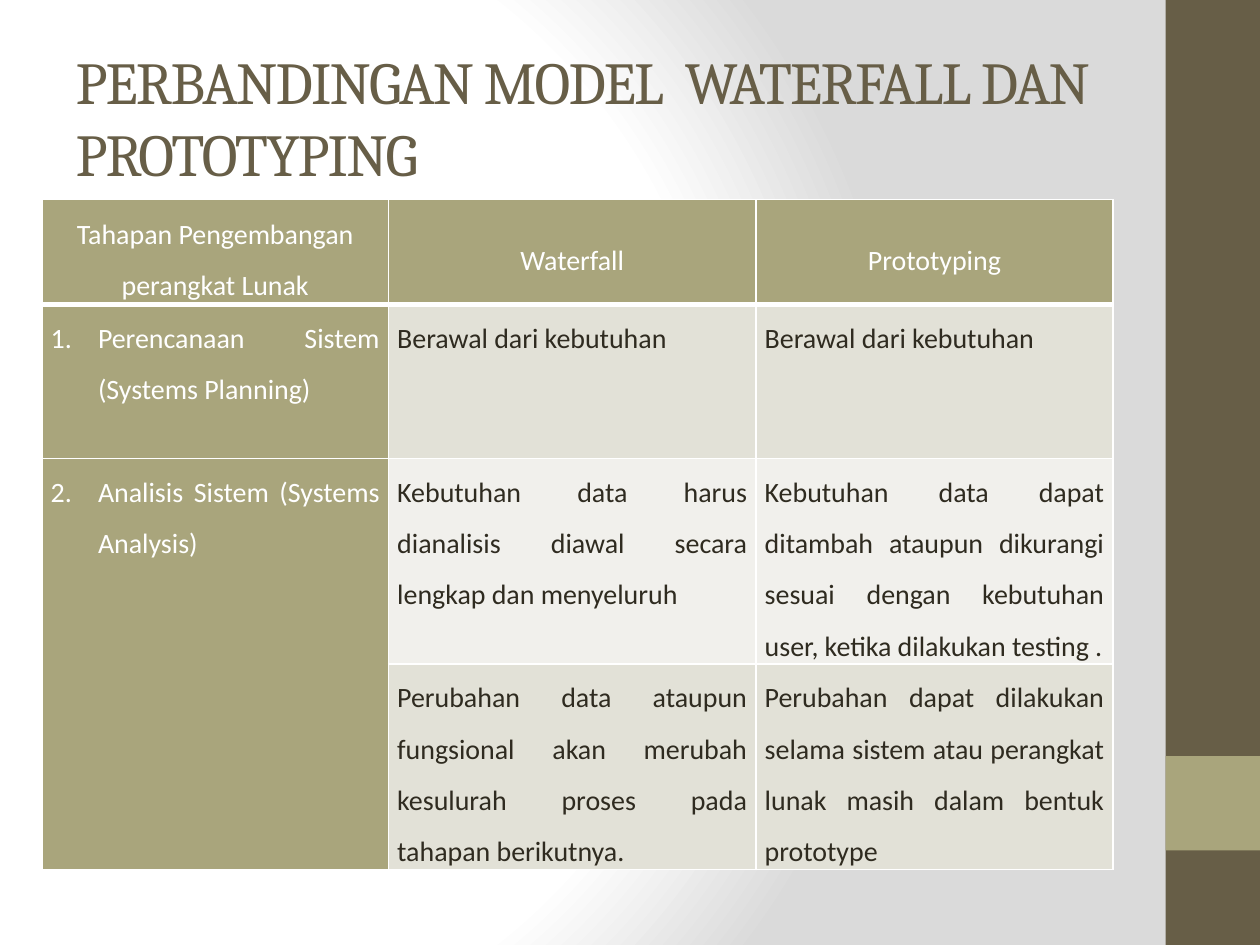
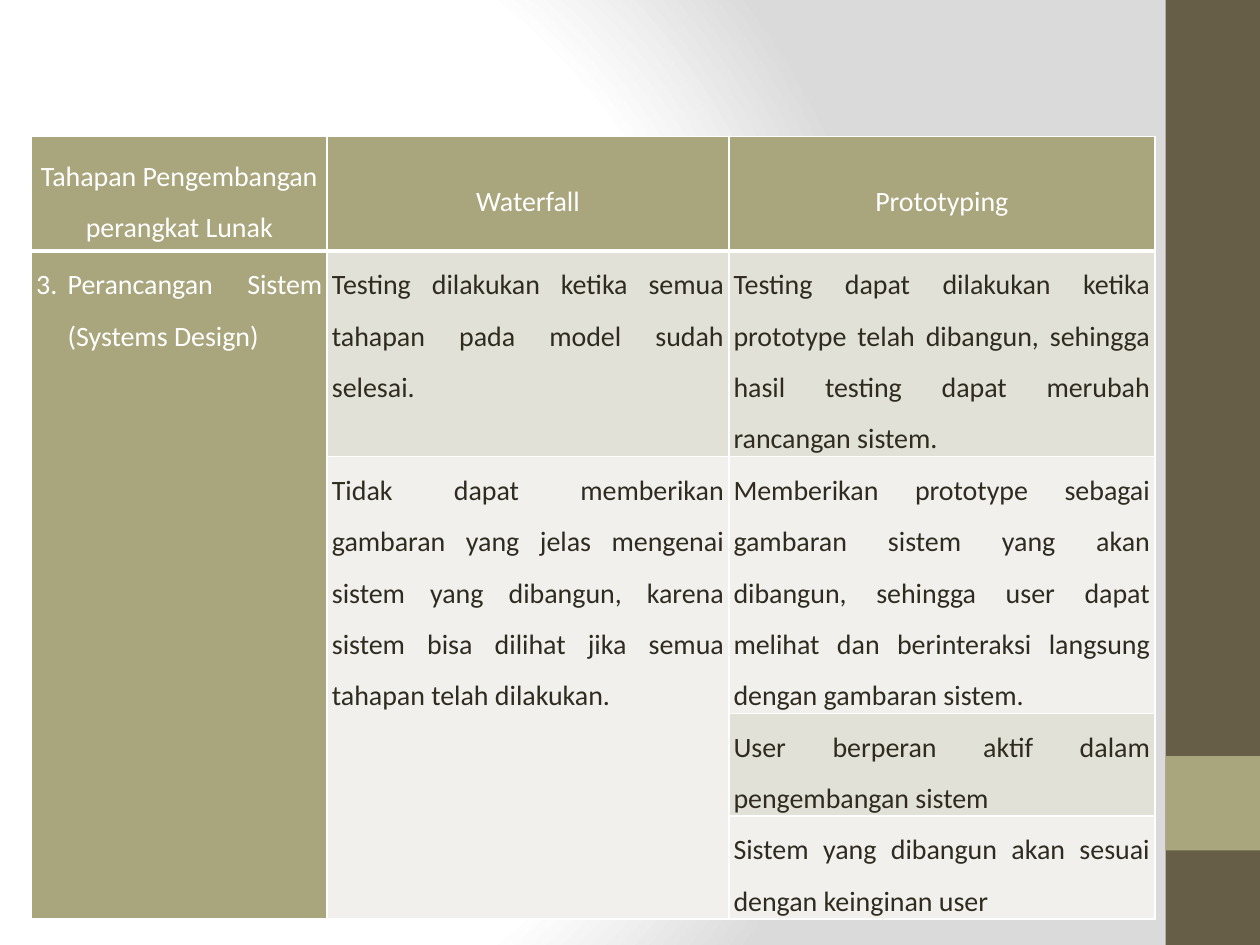
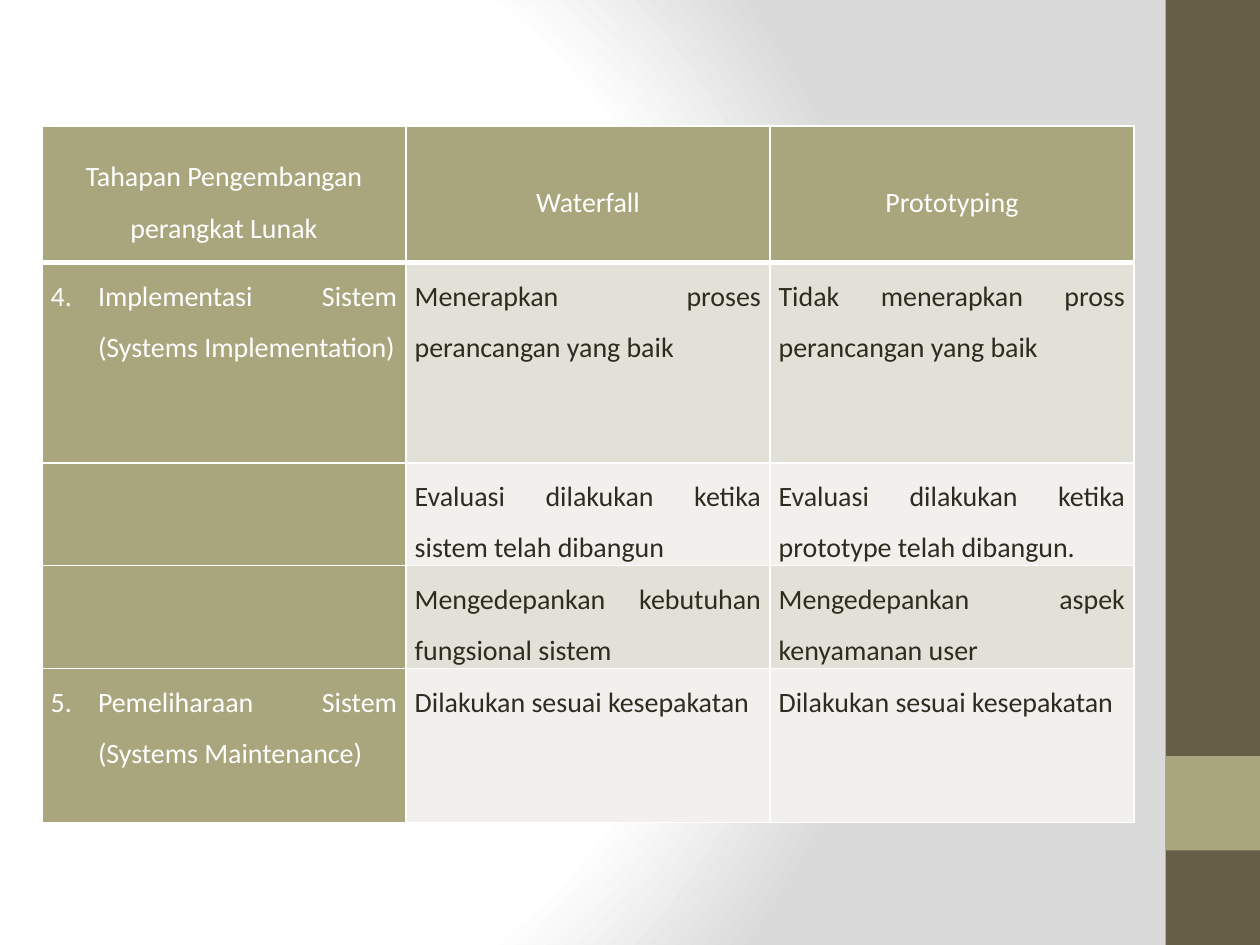
from pptx import Presentation
from pptx.dml.color import RGBColor
from pptx.enum.shapes import MSO_SHAPE as Preset
from pptx.enum.text import MSO_ANCHOR as Anchor, MSO_AUTO_SIZE as AutoSize, PP_ALIGN as Align
from pptx.oxml import parse_xml
from pptx.oxml.ns import nsdecls, qn
from pptx.util import Pt

# ---- Content ----
TITLE = "PERBANDINGAN MODEL  WATERFALL DAN PROTOTYPING"
HEADER = ("Tahapan Pengembangan perangkat Lunak", "Waterfall", "Prototyping")

# A stage is (number, text); None continues the cell above, "" is an empty cell.
COMPARISONS = [
    dict(
        title=TITLE, left=24, top=114, widths=(198, 210, 204),
        heights=(60, 88, 117.2, 117.2), inset=5, indent=27,
        rows=[
            ((1, "Perencanaan Sistem (Systems Planning)"),
             "Berawal dari kebutuhan",
             "Berawal dari kebutuhan"),
            ((2, "Analisis Sistem (Systems Analysis)"),
             "Kebutuhan data harus dianalisis diawal secara lengkap dan menyeluruh",
             "Kebutuhan data dapat ditambah ataupun dikurangi sesuai dengan "
             "kebutuhan user, ketika dilakukan testing ."),
            (None,
             "Perubahan data ataupun fungsional akan merubah kesulurah proses "
             "pada tahapan berikutnya.",
             "Perubahan dapat dilakukan selama sistem atau perangkat lunak masih "
             "dalam bentuk prototype"),
        ],
    ),
    dict(
        title=None, left=18, top=78, widths=(169, 229.5, 243.5),
        heights=(65.5, 117.2, 146.5, 58.6, 58.6), inset=2.7, indent=18,
        rows=[
            ((3, "Perancangan Sistem (Systems Design)"),
             "Testing dilakukan ketika semua tahapan pada model sudah selesai.",
             "Testing dapat dilakukan ketika prototype telah dibangun, sehingga "
             "hasil testing dapat merubah rancangan sistem."),
            (None,
             "Tidak dapat memberikan gambaran yang jelas mengenai sistem yang "
             "dibangun, karena sistem bisa dilihat jika semua tahapan telah dilakukan.",
             "Memberikan prototype sebagai gambaran sistem yang akan dibangun, "
             "sehingga user dapat melihat dan berinteraksi langsung dengan "
             "gambaran sistem."),
            (None, None, "User berperan aktif dalam pengembangan sistem"),
            (None, None, "Sistem yang dibangun akan sesuai dengan keinginan user"),
        ],
    ),
    dict(
        title=None, left=24, top=72, widths=(208, 208, 208),
        heights=(78, 114.5, 58.6, 58.6, 88), inset=5, indent=27,
        rows=[
            ((4, "Implementasi Sistem (Systems Implementation)"),
             "Menerapkan proses perancangan yang baik",
             "Tidak menerapkan pross perancangan yang baik"),
            ("",
             "Evaluasi dilakukan ketika sistem telah dibangun",
             "Evaluasi dilakukan ketika prototype telah dibangun."),
            ("",
             "Mengedepankan kebutuhan fungsional sistem",
             "Mengedepankan aspek kenyamanan user"),
            ((5, "Pemeliharaan Sistem (Systems Maintenance)"),
             "Dilakukan sesuai kesepakatan",
             "Dilakukan sesuai kesepakatan"),
        ],
    ),
]

# ---- Shared style ----
COLORS = dict(brown="675E47", olive="A9A57C", ink="2F2B20", white="FFFFFF",
              dark_row="E2E1D7", light_row="F1F0EC", haze="DADADA")
SLIDE_W, SLIDE_H = 720, 540
BANDS = [(0, SLIDE_H, "brown"), (432, 54, "olive")]  # top, height, colour
BAND_W = 54
TITLE_BOX = (36, 21.6, 600, 90)
BACKDROP_STOPS = [(0, "white"), (75, "white"), (100, "haze")]


def rgb(name):
    return RGBColor.from_string(COLORS[name])


def add_run(paragraph, text, font, size, color):
    run = paragraph.add_run()
    run.text = text
    run.font.name, run.font.size = font, Pt(size)
    run.font.color.rgb = rgb(color)
    return run


def set_backdrop(master):
    master.background.fill.gradient()
    stops = "".join(f'<a:gs pos="{pos * 1000}"><a:srgbClr val="{COLORS[name]}"/></a:gs>'
                    for pos, name in BACKDROP_STOPS)
    backdrop = parse_xml(
        f'<a:gradFill {nsdecls("a")} rotWithShape="1"><a:gsLst>{stops}</a:gsLst>'
        '<a:path path="circle"><a:fillToRect l="20000" t="50000" r="100000" b="50000"/>'
        '</a:path></a:gradFill>')
    plain = next(master.element.iter(qn("a:gradFill")))
    plain.getparent().replace(plain, backdrop)


def add_bands(slide):
    for top, height, color in BANDS:
        band = slide.shapes.add_shape(Preset.RECTANGLE, Pt(SLIDE_W - BAND_W), Pt(top),
                                      Pt(BAND_W), Pt(height))
        band.shadow.inherit = False
        band.fill.solid()
        band.fill.fore_color.rgb = rgb(color)
        band.line.fill.background()


def set_title(slide, text):
    title = slide.shapes.title
    title.left, title.top, title.width, title.height = map(Pt, TITLE_BOX)
    frame = title.text_frame
    frame.auto_size, frame.word_wrap = AutoSize.NONE, True
    frame.vertical_anchor = Anchor.MIDDLE
    paragraph = frame.paragraphs[0]
    paragraph.alignment = Align.LEFT
    run = add_run(paragraph, text, "Cambria", 34, "brown")
    run.font._element.set("spc", "-100")


def number_paragraph(paragraph, number, indent):
    props = paragraph._p.get_or_add_pPr()
    props.set("marL", str(Pt(indent)))
    props.set("indent", str(-Pt(indent)))
    props.append(parse_xml(
        f'<a:buAutoNum {nsdecls("a")} type="arabicPeriod" startAt="{number}"/>'))


def style_cell(cell, fill, is_header, inset):
    props = cell._tc.get_or_add_tcPr()
    for side in "LRTB":
        width = Pt(3 if is_header and side == "B" else 1)
        props.append(parse_xml(
            f'<a:ln{side} {nsdecls("a")} w="{width}"><a:solidFill>'
            f'<a:srgbClr val="{COLORS["white"]}"/></a:solidFill></a:ln{side}>'))
    cell.fill.solid()
    cell.fill.fore_color.rgb = rgb(fill)
    cell.margin_left = cell.margin_right = Pt(inset)
    cell.margin_top = cell.margin_bottom = 0
    cell.vertical_anchor = Anchor.MIDDLE if is_header else Anchor.TOP


def write_cell(cell, content, is_header, color, indent):
    paragraph = cell.text_frame.paragraphs[0]
    paragraph.alignment = Align.CENTER if is_header else Align.JUSTIFY
    paragraph.line_spacing = 1.5
    paragraph.space_after = Pt(10)
    if isinstance(content, tuple):
        number, content = content
        number_paragraph(paragraph, number, indent)
    add_run(paragraph, content, "Calibri", 16, color)


def add_comparison(slide, part):
    rows = [HEADER, *part["rows"]]
    widths, heights = part["widths"], part["heights"]
    table = slide.shapes.add_table(
        len(rows), len(widths), Pt(part["left"]), Pt(part["top"]),
        Pt(sum(widths)), Pt(sum(heights))).table
    table.first_row = table.horz_banding = False
    for column, width in zip(table.columns, widths):
        column.width = Pt(width)
    for row, height in zip(table.rows, heights):
        row.height = Pt(height)

    for r, row in enumerate(rows):
        for c, content in enumerate(row):
            cell = table.cell(r, c)
            is_header = r == 0
            on_olive = is_header or c == 0
            fill = "olive" if on_olive else "dark_row" if r % 2 else "light_row"
            style_cell(cell, fill, is_header, part["inset"])
            if content:
                write_cell(cell, content, is_header,
                           "white" if on_olive else "ink", part["indent"])

    # Join each cell with the continuations below it
    for c in range(len(widths)):
        for r in range(len(rows)):
            last = r
            while last + 1 < len(rows) and rows[last + 1][c] is None:
                last += 1
            if rows[r][c] is not None and last > r:
                table.cell(r, c).merge(table.cell(last, c))


def main():
    deck = Presentation()
    deck.slide_width, deck.slide_height = Pt(SLIDE_W), Pt(SLIDE_H)
    set_backdrop(deck.slide_master)
    title_only, blank = deck.slide_layouts[5], deck.slide_layouts[6]
    for part in COMPARISONS:
        slide = deck.slides.add_slide(title_only if part["title"] else blank)
        add_bands(slide)
        if part["title"]:
            set_title(slide, part["title"])
        add_comparison(slide, part)
    deck.save("out.pptx")


if __name__ == "__main__":
    main()
